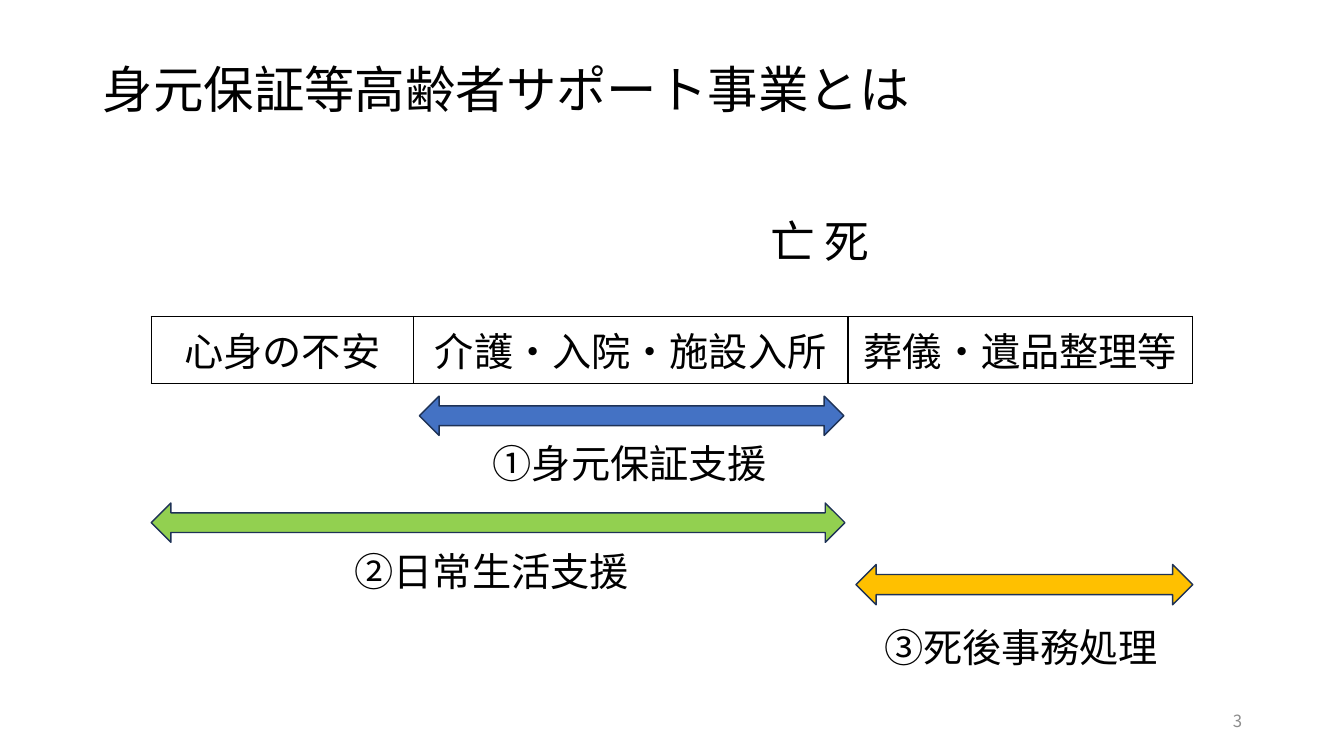
from dataclasses import dataclass

from lxml.etree import SubElement
from pptx import Presentation
from pptx.dml.color import RGBColor
from pptx.enum.shapes import MSO_SHAPE
from pptx.enum.text import MSO_ANCHOR, MSO_AUTO_SIZE, PP_ALIGN
from pptx.oxml.ns import qn
from pptx.slide import Slide
from pptx.table import _Cell
from pptx.text.text import TextFrame
from pptx.util import Inches, Pt

FONT = "Noto Sans CJK JP"
COLORS = {
    "text": "000000",
    "page_number": "8C8C8C",
    "outline": "1E3256",
    "guarantee": "4472C4",
    "daily_life": "92D050",
    "after_death": "FFC000",
}


@dataclass(frozen=True)
class Box:
    left: float
    top: float
    width: float
    height: float

    def inches(self) -> tuple:
        return tuple(Inches(v) for v in (self.left, self.top, self.width, self.height))


@dataclass(frozen=True)
class Support:
    label: str
    label_box: Box
    arrow_box: Box
    color: str


@dataclass(frozen=True)
class Stage:
    name: str
    width: float


STAGES = [
    Stage("心身の不安", 2.6),
    Stage("介護・入院・施設入所", 4.31),
    Stage("葬儀・遺品整理等", 3.42),
]
SUPPORTS = [
    Support("①身元保証支援", Box(4.79, 4.31, 2.96, 0.57), Box(4.16, 3.93, 4.21, 0.39), "guarantee"),
    Support("②日常生活支援", Box(3.42, 5.38, 3, 0.57), Box(1.5, 4.99, 6.88, 0.39), "daily_life"),
    Support("③死後事務処理", Box(8.67, 6.13, 3, 0.57), Box(8.49, 5.6, 3.34, 0.4), "after_death"),
]


def write(frame: TextFrame, text: str, *, size: float = 28, color: str = "text",
          align: PP_ALIGN = PP_ALIGN.LEFT, spacing: float = 1.0) -> None:
    para = frame.paragraphs[0]
    para.alignment = align
    para.line_spacing = spacing
    span = para.add_run()
    span.text = text
    span.font.size = Pt(size)
    span.font.name = FONT
    span.font.color.rgb = RGBColor.from_string(COLORS[color])
    SubElement(span.font._element, qn("a:ea"), typeface=FONT)


def add_text(page: Slide, box: Box, text: str, *, grow: bool = True,
             anchor: MSO_ANCHOR = MSO_ANCHOR.TOP, **text_format) -> TextFrame:
    frame = page.shapes.add_textbox(*box.inches()).text_frame
    frame.word_wrap = True
    frame.auto_size = MSO_AUTO_SIZE.SHAPE_TO_FIT_TEXT if grow else MSO_AUTO_SIZE.NONE
    frame.vertical_anchor = anchor
    write(frame, text, **text_format)
    return frame


def add_arrow(page: Slide, box: Box, color: str) -> None:
    arrow = page.shapes.add_shape(MSO_SHAPE.LEFT_RIGHT_ARROW, *box.inches())
    arrow.shadow.inherit = False
    arrow.fill.solid()
    arrow.fill.fore_color.rgb = RGBColor.from_string(COLORS[color])
    arrow.line.color.rgb = RGBColor.from_string(COLORS["outline"])
    arrow.line.width = Pt(1)


def add_borders(cell: _Cell) -> None:
    properties = cell._tc.get_or_add_tcPr()
    for side in ("a:lnL", "a:lnR", "a:lnT", "a:lnB"):
        line = SubElement(properties, qn(side), w=str(Pt(1)))
        fill = SubElement(line, qn("a:solidFill"))
        SubElement(fill, qn("a:srgbClr"), val=COLORS["text"])


def add_stage_table(page: Slide, box: Box) -> None:
    table = page.shapes.add_table(1, len(STAGES), *box.inches()).table
    table.first_row = False
    table.horz_banding = False
    for index, stage in enumerate(STAGES):
        table.columns[index].width = Inches(stage.width)
        cell = table.cell(0, index)
        write(cell.text_frame, stage.name, align=PP_ALIGN.CENTER)
        add_borders(cell)
        cell.fill.background()


def main() -> None:
    deck = Presentation()
    deck.slide_width, deck.slide_height = Inches(13.33), Inches(7.5)
    page = deck.slides.add_slide(deck.slide_layouts[5])

    # Title and page number
    title = page.shapes.title
    title.left, title.top, title.width, title.height = Box(0.92, 0.4, 11.5, 1.03).inches()
    title.text_frame.auto_size = MSO_AUTO_SIZE.NONE
    title.text_frame.vertical_anchor = MSO_ANCHOR.MIDDLE
    write(title.text_frame, "身元保証等高齢者サポート事業とは", size=36, spacing=0.9)
    add_text(page, Box(9.42, 6.95, 3, 0.4), "3", grow=False, anchor=MSO_ANCHOR.MIDDLE,
             size=12, color="page_number", align=PP_ALIGN.RIGHT)

    # Stages of later life
    add_stage_table(page, Box(1.5, 3.14, 10.33, 0.57))

    # Span of each support
    for support in SUPPORTS:
        add_arrow(page, support.arrow_box, support.color)
        add_text(page, support.label_box, support.label)

    # Vertical mark above the last stage boundary
    death = add_text(page, Box(7.96, 2.08, 0.74, 1.06), "死亡", size=32)
    death._txBody.bodyPr.set("vert", "eaVert")

    deck.save("out.pptx")


if __name__ == "__main__":
    main()
